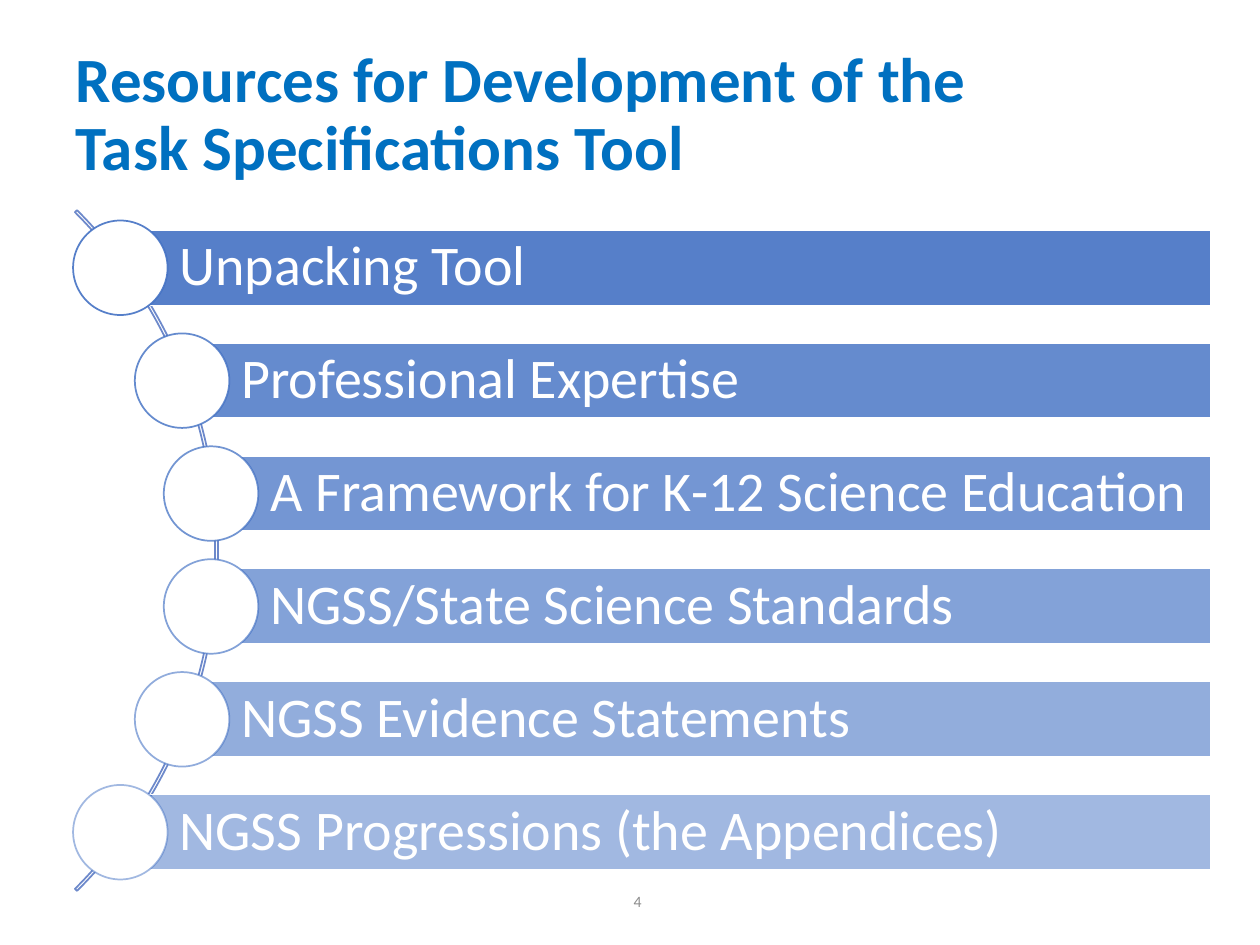
"""Build the slide listing the resources behind the Task Specifications Tool."""
import lxml.etree
import pptx
import pptx.dml.color
import pptx.enum.shapes
import pptx.enum.text
import pptx.oxml.ns
import pptx.util

Inches = pptx.util.Inches
Shape = pptx.enum.shapes.MSO_SHAPE
Align = pptx.enum.text.PP_ALIGN

TITLE_BLUE = pptx.dml.color.RGBColor(0x00, 0x70, 0xC0)
ACCENT = pptx.dml.color.RGBColor(0x44, 0x72, 0xC4)
ARC_BLUE = pptx.dml.color.RGBColor(0x6D, 0x89, 0xCB)
WHITE = pptx.dml.color.RGBColor(0xFF, 0xFF, 0xFF)
GREY = pptx.dml.color.RGBColor(0x8C, 0x8C, 0x8C)

RESOURCES = [
    ("Unpacking Tool", 0.58),
    ("Professional Expertise", 1.07),
    ("A Framework for K-12 Science Education", 1.3),
    ("NGSS/State Science Standards", 1.3),
    ("NGSS Evidence Statements", 1.07),
    ("NGSS Progressions (the Appendices)", 0.58),
]
FIRST_TOP, LAST_TOP = 1.75, 6.23
PITCH = (LAST_TOP - FIRST_TOP) / (len(RESOURCES) - 1)
CIRCLE, BAR_HEIGHT, BAR_RIGHT = 0.75, 0.6, 9.61


class SlideBuilder:
    def __init__(self, slide):
        self.slide = slide
        self.font_name = "Calibri"
        self.frame_format = {
            "word_wrap": True,
            "auto_size": pptx.enum.text.MSO_AUTO_SIZE.NONE,
            "vertical_anchor": pptx.enum.text.MSO_ANCHOR.MIDDLE,
        }

    def set_text(self, frame, text, size, color, align=Align.LEFT, bold=False, spacing=0.9):
        frame.text = text
        paragraph = frame.paragraphs[0]
        font_format = {"name": self.font_name, "size": pptx.util.Pt(size), "bold": bold}
        paragraph_format = {"alignment": align, "line_spacing": spacing}
        for target, values in (
            (frame, self.frame_format),
            (paragraph, paragraph_format),
            *((run.font, font_format) for run in paragraph.runs),
        ):
            for name, value in values.items():
                setattr(target, name, value)
        for run in paragraph.runs:
            run.font.color.rgb = color

    def title(self, text, left, top, width, height):
        heading = self.slide.shapes.title
        place = {"left": left, "top": top, "width": width, "height": height}
        for name, value in place.items():
            setattr(heading, name, Inches(value))
        self.set_text(heading.text_frame, text, 36, TITLE_BLUE, bold=True)

    def page_number(self, text, left, top, width, height):
        number = self.slide.shapes.add_textbox(*map(Inches, (left, top, width, height)))
        self.set_text(number.text_frame, text, 9, GREY, align=Align.RIGHT, spacing=1.0)

    def outline(self, kind, box, line_color, fill_color=None):
        shape = self.slide.shapes.add_shape(kind, *map(Inches, box))
        shape.shadow.inherit = False
        if fill_color is None:
            shape.fill.background()
        else:
            shape.fill.solid()
            shape.fill.fore_color.rgb = fill_color
        shape.line.color.rgb = line_color
        shape.line.width = pptx.util.Pt(1)
        return shape

    def arc(self, left, top, size):
        curve = self.outline(Shape.BLOCK_ARC, (left, top, size, size), ARC_BLUE)
        for index, value in enumerate((189, 27, 0.003)):
            curve.adjustments[index] = value

    def bar(self, text, left, top, opacity):
        box = (left, top, BAR_RIGHT - left, BAR_HEIGHT)
        band = self.outline(Shape.RECTANGLE, box, WHITE, ACCENT)
        self.set_opacity(band.element.spPr, opacity)
        margins = {"margin_left": 0.47, "margin_right": 0.09,
                   "margin_top": 0.09, "margin_bottom": 0.09}
        for name, value in margins.items():
            setattr(band.text_frame, name, Inches(value))
        self.set_text(band.text_frame, text, 32, WHITE)

    def circle(self, left, top, opacity):
        node = self.outline(Shape.OVAL, (left, top, CIRCLE, CIRCLE), ACCENT, WHITE)
        self.set_opacity(node.element.spPr.find(pptx.oxml.ns.qn("a:ln")), opacity)

    def set_opacity(self, parent, percent):
        solid_fill = parent.find(pptx.oxml.ns.qn("a:solidFill"))
        alpha = lxml.etree.SubElement(solid_fill[0], pptx.oxml.ns.qn("a:alpha"))
        alpha.set("val", str(percent * 1000))


def main():
    deck = pptx.Presentation()
    deck.slide_width, deck.slide_height = Inches(10), Inches(7.5)
    builder = SlideBuilder(deck.slides.add_slide(deck.slide_layouts[5]))
    builder.page_number("4", 2.94, 6.95, 2.25, 0.4)
    builder.title("Resources for Development of the \vTask Specifications Tool",
                  0.5, 0.3, 9, 1.25)
    builder.arc(-5.91, 0.55, 7.64)
    for index, (resource, left) in enumerate(RESOURCES):
        top = FIRST_TOP + index * PITCH
        opacity = 90 - 8 * index
        builder.bar(resource, left + CIRCLE / 2, top + (CIRCLE - BAR_HEIGHT) / 2, opacity)
        builder.circle(left, top, opacity)
    deck.save("out.pptx")


if __name__ == "__main__":
    main()
